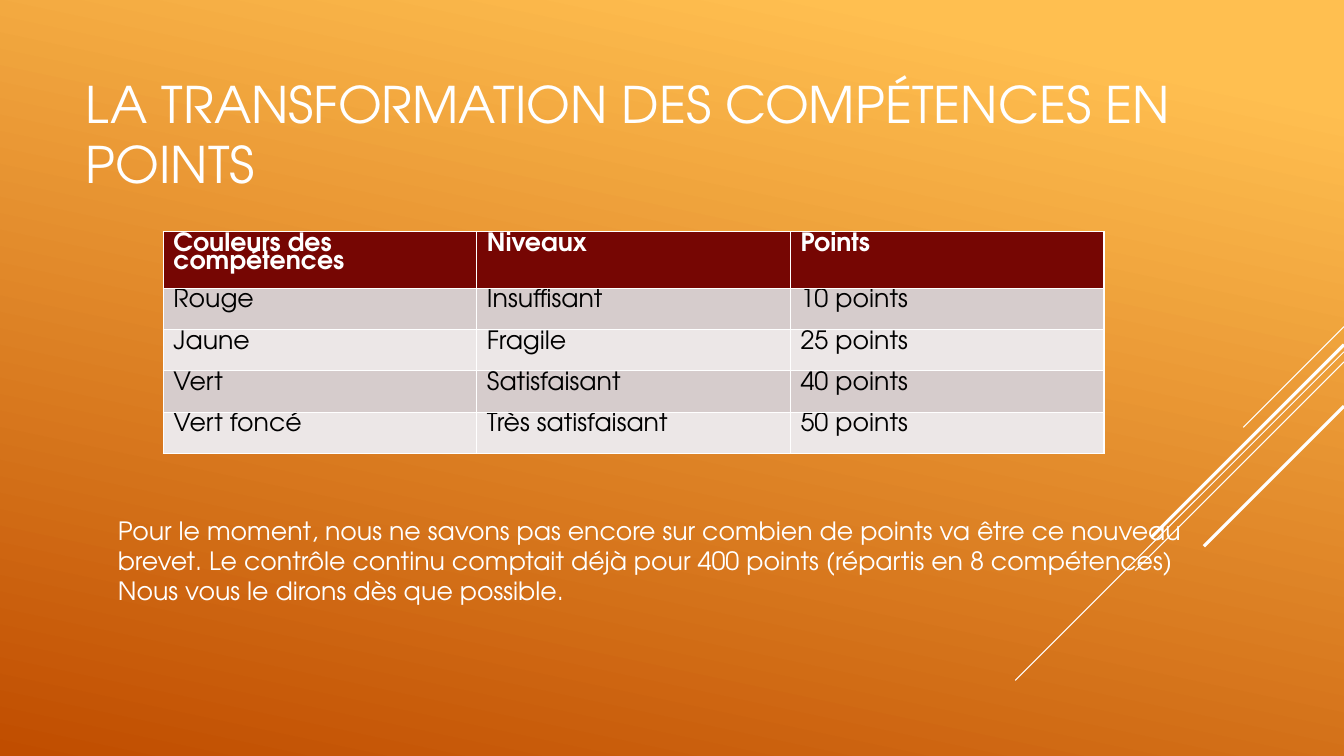
import pptx
import pptx.dml.color
import pptx.enum.dml
import pptx.enum.shapes
import pptx.enum.text
import pptx.oxml.ns
import pptx.util
from lxml import etree
from pptx.util import Inches

RGBColor = pptx.dml.color.RGBColor
WHITE = RGBColor(0xFF, 0xFF, 0xFF)
BLACK = RGBColor(0x00, 0x00, 0x00)
AMBER = RGBColor(0xFF, 0xBF, 0x50)
RUST = RGBColor(0xC0, 0x4D, 0x00)
DARK_RED = RGBColor(0x76, 0x06, 0x03)
ROW_TINTS = (RGBColor(0xEC, 0xE7, 0xE7), RGBColor(0xD6, 0xCC, 0xCC))

FONT = "TeX Gyre Adventor"
SLIDE_WIDTH = 13.33
TITLE = "LA TRANSFORMATION DES COMPÉTENCES EN POINTS"
SCALE = (
    ("Couleurs des compétences", "Niveaux", "Points"),
    ("Rouge", "Insuffisant", "10 points"),
    ("Jaune", "Fragile", "25 points"),
    ("Vert", "Satisfaisant", "40 points"),
    ("Vert foncé", "Très satisfaisant", "50 points"),
)
REMARKS = (
    "Pour le moment, nous ne savons pas encore sur combien de points va être ce "
    "nouveau brevet. Le contrôle continu comptait déjà pour 400 points "
    "(répartis en 8 compétences)",
    "Nous vous le dirons dès que possible.",
)
# top at the right edge, horizontal and vertical run, width in points
DIAGONALS = (
    (3.24, 1.00, 0.75),
    (3.49, 3.26, 0.75),
    (3.59, 2.07, 0.75),
    (3.42, 1.91, 2.25),
    (4.03, 1.39, 2.25),
)


def style_paragraph(paragraph, size, color, bold=False):
    paragraph.font.name = FONT
    paragraph.font.size = pptx.util.Pt(size)
    paragraph.font.color.rgb = color
    paragraph.font.bold = bold
    paragraph.alignment = pptx.enum.text.PP_ALIGN.LEFT


def paint_background(slide):
    fill = slide.background.fill
    fill.gradient()
    fill.gradient_angle = 360 - 102
    for stop, position, color in zip(fill.gradient_stops, (0.1, 1), (AMBER, RUST)):
        stop.position = position
        stop.color.rgb = color


def add_diagonal(slide, top, run, width):
    diagonal = slide.shapes.add_connector(
        pptx.enum.shapes.MSO_CONNECTOR.STRAIGHT,
        Inches(SLIDE_WIDTH), Inches(top),
        Inches(SLIDE_WIDTH - run), Inches(top + run),
    )
    diagonal.line.color.rgb = WHITE
    diagonal.line.width = pptx.util.Pt(width)
    etree.SubElement(diagonal.element.spPr, pptx.oxml.ns.qn("a:effectLst"))


def write_title(slide):
    title = slide.shapes.title
    title.left, title.top = Inches(0.75), Inches(0.5)
    title.width, title.height = Inches(11.09), Inches(1.65)
    frame = title.text_frame
    frame.text = TITLE
    frame.auto_size = pptx.enum.text.MSO_AUTO_SIZE.NONE
    frame.vertical_anchor = pptx.enum.text.MSO_ANCHOR.MIDDLE
    style_paragraph(frame.paragraphs[0], 36, WHITE)


def add_scale_table(slide):
    table = slide.shapes.add_table(
        len(SCALE), len(SCALE[0]),
        Inches(1.62), Inches(2.3), Inches(9.33), Inches(2.2),
    ).table
    for row_index, entries in enumerate(SCALE):
        is_header = row_index == 0
        table.rows[row_index].height = Inches(0.56 if is_header else 0.41)
        for column_index, entry in enumerate(entries):
            cell = table.cell(row_index, column_index)
            cell.text = entry
            cell.fill.solid()
            cell.fill.fore_color.rgb = DARK_RED if is_header else ROW_TINTS[row_index % 2]
            paragraph = cell.text_frame.paragraphs[0]
            paragraph.line_spacing = 0.77
            style_paragraph(paragraph, 18, WHITE if is_header else BLACK, is_header)


def add_remarks(slide):
    remarks = slide.shapes.add_textbox(
        Inches(1.07), Inches(5.06), Inches(11.23), Inches(1.01)
    )
    frame = remarks.text_frame
    frame.word_wrap = True
    frame.text = "\n".join(REMARKS)
    for paragraph in frame.paragraphs:
        style_paragraph(paragraph, 18, WHITE)


def main():
    presentation = pptx.Presentation()
    presentation.slide_width = Inches(SLIDE_WIDTH)
    presentation.slide_height = Inches(7.5)
    slide = presentation.slides.add_slide(presentation.slide_layouts[5])
    paint_background(slide)
    for top, run, width in DIAGONALS:
        add_diagonal(slide, top, run, width)
    write_title(slide)
    add_scale_table(slide)
    add_remarks(slide)
    presentation.save("out.pptx")


if __name__ == "__main__":
    main()
